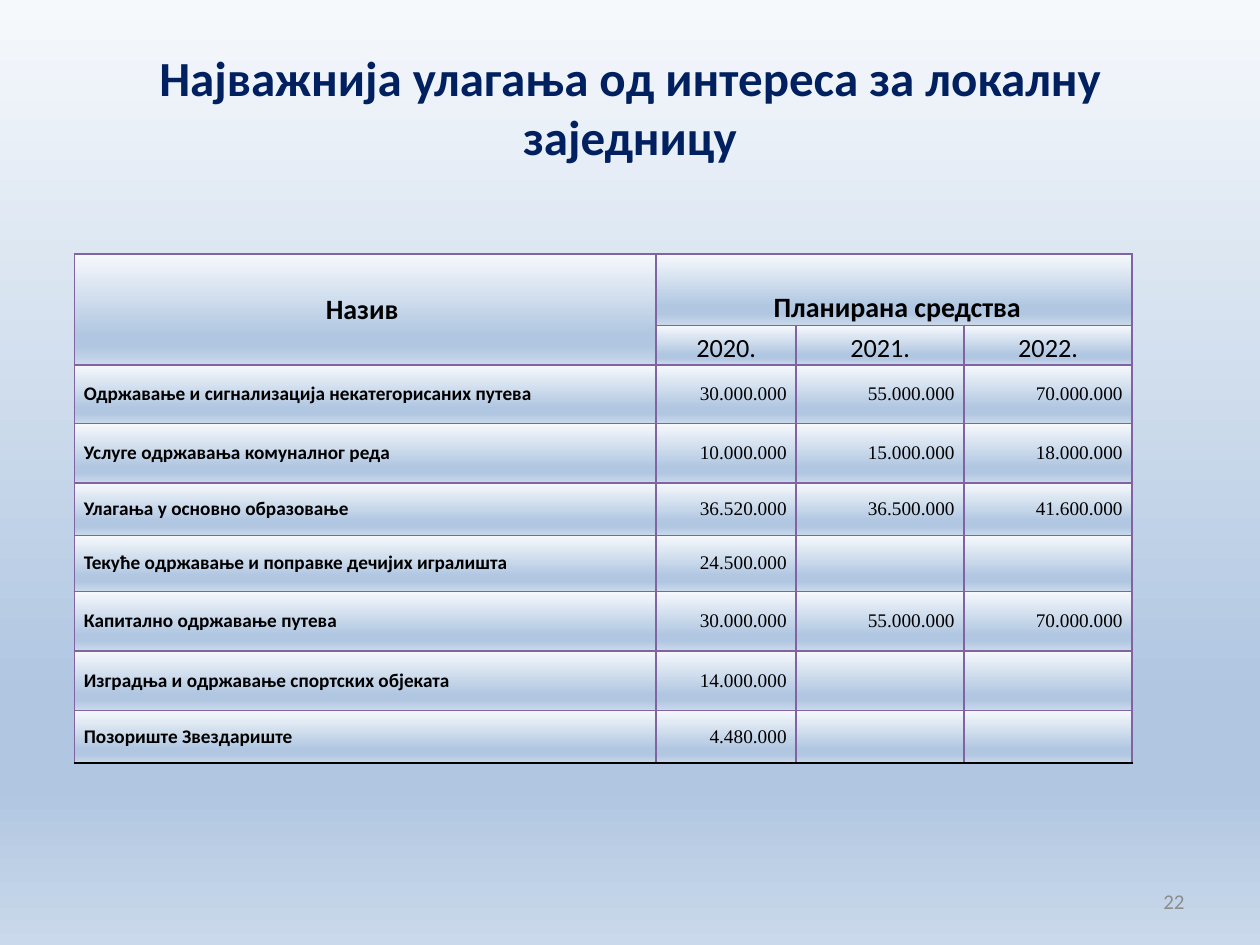
from lxml.etree import SubElement
from pptx import Presentation
from pptx.dml.color import RGBColor
from pptx.enum.text import MSO_ANCHOR as Anchor, PP_ALIGN as Align
from pptx.oxml import parse_xml
from pptx.oxml.ns import nsdecls, qn
from pptx.util import Pt

STOPS = [(0, "F6F9FC"), (74, "B0C6E1"), (83, "B0C6E1"), (100, "CAD9EB")]
PURPLE, BLACK = "8064A2", "000000"
HEADING = {"name": "Calibri", "size": Pt(16), "bold": True}
YEAR = {"name": "Calibri", "size": Pt(15), "bold": False}
LABEL = {"name": "Calibri", "size": Pt(11), "bold": True}
AMOUNT = {"name": "Times New Roman", "size": Pt(11), "bold": False}


def write(frame, text, align, color, font):
    """Put one formatted paragraph into a text frame."""
    para = frame.paragraphs[0]
    para.alignment = align
    span = para.add_run()
    span.text = text
    span.font.color.rgb = RGBColor.from_string(color)
    for name, value in font.items():
        setattr(span.font, name, value)


def shade(fill, element):
    """Give a fill, held in an XML element, the blue top-down gradient."""
    fill.gradient()
    fill.gradient_angle = 270
    stops = element.find(".//" + qn("a:gsLst"))
    for old in list(stops):
        stops.remove(old)
    for position, color in STOPS:
        stop = SubElement(stops, qn("a:gs"), pos=str(position * 1000))
        SubElement(stop, qn("a:srgbClr"), val=color)


deck = Presentation()
deck.slide_width, deck.slide_height = Pt(720), Pt(540)
page = deck.slides.add_slide(deck.slide_layouts[5])
shade(page.background.fill, page.element)

title = page.shapes.title
title.left, title.top, title.width, title.height = Pt(36), Pt(21.6), Pt(648), Pt(78.5)
title.text_frame.vertical_anchor = Anchor.MIDDLE
write(title.text_frame, "Најважнија улагања од интереса за локалну заједницу", Align.CENTER,
      "002060", {"name": "Calibri", "size": Pt(28), "bold": True})

number = page.shapes.add_textbox(Pt(516), Pt(500.5), Pt(168), Pt(28.75)).text_frame
number.word_wrap = True
number.vertical_anchor = Anchor.MIDDLE
write(number, "22", Align.RIGHT, "8C8C8C", {"name": "Calibri", "size": Pt(12)})

rows = [
    ["Назив ", " Планирана средства", "", ""],
    ["", "2020.", "2021.", "2022."],
    ["Одржавање и сигнализација некатегорисаних путева", "30.000.000", "55.000.000", "70.000.000"],
    ["Услуге одржавања комуналног реда", "10.000.000", "15.000.000", "18.000.000"],
    ["Улагања у основно образовање", "36.520.000", "36.500.000", "41.600.000"],
    ["Текуће одржавање и поправке дечијих игралишта", "24.500.000", "", ""],
    ["Капитално одржавање путева", "30.000.000", "55.000.000", "70.000.000"],
    ["Изградња и одржавање спортских објеката", "14.000.000", "", ""],
    ["Позориште Звездариште", "4.480.000", "", ""],
]
widths = [332.5, 80, 96, 96]
heights = [40.75, 22.5, 33.5, 34, 30, 32, 34, 34, 30.25]
table = page.shapes.add_table(len(rows), len(widths), Pt(42.5), Pt(145.25),
                              Pt(sum(widths)), Pt(sum(heights))).table
table.first_row = table.horz_banding = False
for column, width in zip(table.columns, widths):
    column.width = Pt(width)
for row, height in zip(table.rows, heights):
    row.height = Pt(height)
table.cell(0, 0).merge(table.cell(1, 0))
table.cell(0, 1).merge(table.cell(0, 3))

for r, texts in enumerate(rows):
    for c, text in enumerate(texts):
        cell = table.cell(r, c)
        cell.margin_left = cell.margin_right = Pt(5.4)
        cell.margin_top = cell.margin_bottom = Pt(0)
        cell.vertical_anchor = Anchor.BOTTOM if r < 2 and c else Anchor.MIDDLE
        shade(cell.fill, cell._tc)
        for place, side in enumerate(["lnL", "lnR", "lnT", "lnB"]):
            color = BLACK if side == "lnB" and r == len(rows) - 1 else PURPLE
            cell._tc.tcPr.insert(place, parse_xml(
                f'<a:{side} {nsdecls("a")} w="12700"><a:solidFill>'
                f'<a:srgbClr val="{color}"/></a:solidFill></a:{side}>'))
        if text:
            if r < 2:
                align, font = Align.CENTER, YEAR if r else HEADING
            else:
                align, font = (Align.RIGHT, AMOUNT) if c else (Align.LEFT, LABEL)
            write(cell.text_frame, text, align, BLACK, font)

deck.save("out.pptx")
